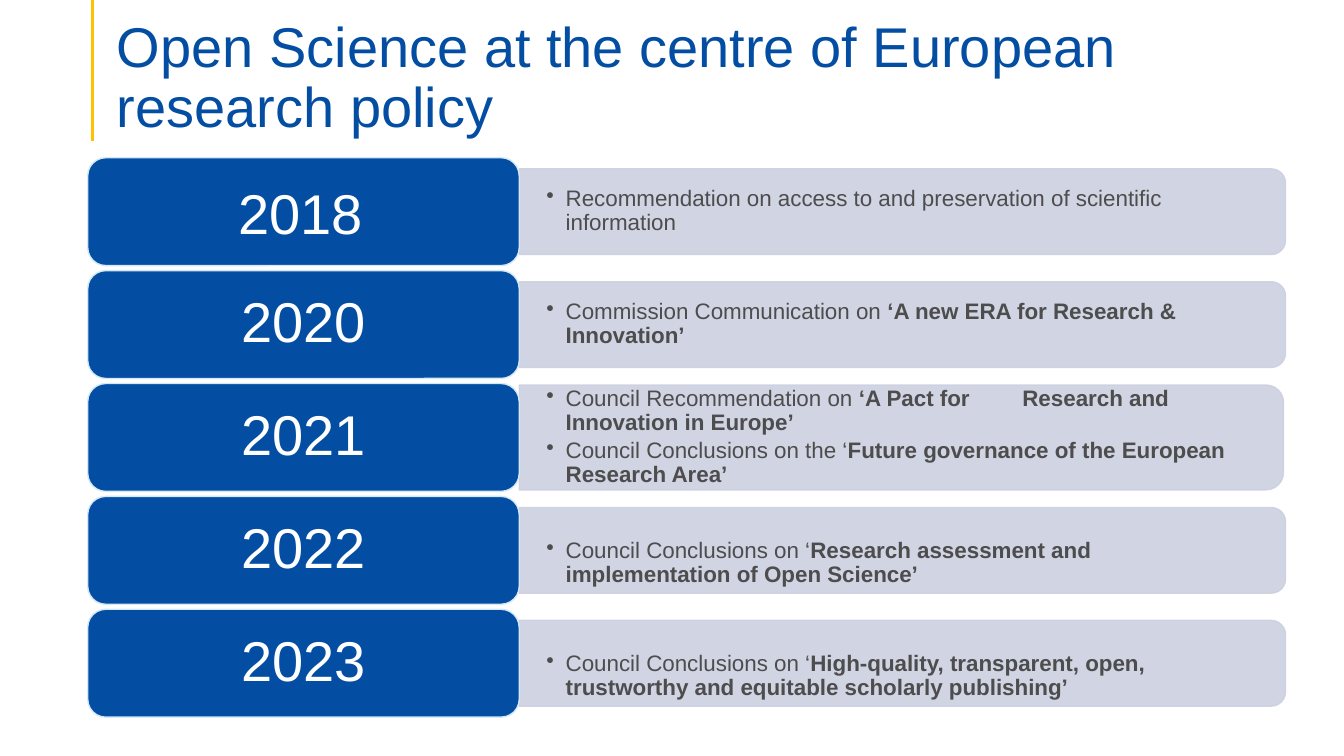
"""Build a slide that lists European open science policy milestones by year."""
from lxml.etree import SubElement
from pptx import Presentation
from pptx.dml.color import RGBColor
from pptx.enum.shapes import MSO_CONNECTOR, MSO_SHAPE
from pptx.enum.text import MSO_ANCHOR, MSO_AUTO_SIZE, PP_ALIGN
from pptx.oxml.ns import qn
from pptx.util import Inches, Pt

BLUE = RGBColor(0x03, 0x4E, 0xA2)
PALE_BLUE = RGBColor(0xD3, 0xE8, 0xF9)
LAVENDER = RGBColor(0xCC, 0xD0, 0xE0)
GOLD = RGBColor(0xFF, 0xC0, 0x00)
GREY = RGBColor(0x4D, 0x4D, 0x4D)
WHITE = RGBColor(0xFF, 0xFF, 0xFF)

FIRST_CENTRE, ROW_PITCH = 2.1, 1.12
YEAR_LEFT, YEAR_WIDTH, YEAR_HEIGHT = 0.87, 4.28, 1.07
PANEL_LEFT = YEAR_LEFT + YEAR_WIDTH

MILESTONES = [
    {"year": "2018", "year_drop": 0.1, "year_shift": 0.06, "entries": [
        ("Recommendation on access to and preservation of scientific information", "")]},
    {"year": "2020", "entries": [
        ("Commission Communication on ", "‘A new ERA for Research & Innovation’")]},
    {"year": "2021", "panel": (7.58, 1.04), "entries": [
        ("Council Recommendation on ", "‘A Pact for\tResearch and Innovation in Europe’"),
        ("Council Conclusions on the ‘", "Future governance of the European Research Area’")]},
    {"year": "2022", "drop": 0.26, "entries": [
        ("Council Conclusions on ‘", "Research assessment and implementation of Open Science’")]},
    {"year": "2023", "drop": 0.26, "entries": [
        ("Council Conclusions on ‘",
         "High-quality, transparent, open, trustworthy and equitable scholarly publishing’")]},
]


def apply(target, values):
    """Set each named attribute on the target."""
    for name, value in values.items():
        setattr(target, name, value)


class PolicySlide:
    """Hold the style and the current slide."""

    font_name = "Arial"
    line_spacing = 0.9

    def __init__(self, presentation):
        """Add a title-only slide."""
        self.slide = presentation.slides.add_slide(presentation.slide_layouts[5])

    def frame(self, shape, anchor, insets):
        """Format the text frame and return it."""
        left, top, right, bottom = map(Inches, insets)
        apply(shape.text_frame, {
            "word_wrap": True, "auto_size": MSO_AUTO_SIZE.NONE, "vertical_anchor": anchor,
            "margin_left": left, "margin_top": top,
            "margin_right": right, "margin_bottom": bottom})
        return shape.text_frame

    def add_words(self, paragraph, wording, size, color, align, bold=False):
        """Add one run to a paragraph."""
        apply(paragraph, {"alignment": align, "line_spacing": self.line_spacing})
        run = paragraph.add_run()
        run.text = wording
        apply(run.font, {"name": self.font_name, "size": Pt(size), "bold": bold})
        run.font.color.rgb = color

    def title(self, wording):
        """Place and format the title."""
        heading = self.slide.shapes.title
        apply(heading, {"left": Inches(1.06), "top": Inches(0.53),
                        "width": Inches(11.5), "height": Inches(0.86)})
        frame = self.frame(heading, MSO_ANCHOR.BOTTOM, (0.1, 0.05, 0.1, 0))
        self.add_words(frame.paragraphs[0], wording, 40, BLUE, PP_ALIGN.LEFT)

    def accent(self):
        """Draw the vertical rule beside the title."""
        rule = self.slide.shapes.add_connector(
            MSO_CONNECTOR.STRAIGHT, Inches(0.92), 0, Inches(0.92), Inches(1.4))
        apply(rule.line, {"width": Pt(2.25)})
        rule.line.color.rgb = GOLD
        SubElement(rule._element.spPr, qn("a:effectLst"))

    def block(self, preset, box, fill, outline):
        """Add a filled preset shape."""
        shape = self.slide.shapes.add_shape(preset, *map(Inches, box))
        shape.shadow.inherit = False
        shape.fill.solid()
        shape.fill.fore_color.rgb = fill
        shape.line.color.rgb = outline
        shape.line.width = Pt(1)
        return shape

    def panel(self, centre, width, height):
        """Add a panel with rounded corners on its right side."""
        middle = PANEL_LEFT + width / 2
        box = (middle - height / 2, centre - width / 2, height, width)
        shape = self.block(MSO_SHAPE.ROUND_2_SAME_RECTANGLE, box, LAVENDER, LAVENDER)
        shape.rotation = 90
        for color in shape._element.spPr.iter(qn("a:srgbClr")):
            SubElement(color, qn("a:alpha"), val="90000")

    def entries(self, centre, entries, drop):
        """List the bulleted policy documents of one year."""
        box = self.slide.shapes.add_textbox(
            Inches(PANEL_LEFT), Inches(centre - 0.52), Inches(7.55), Inches(1.04))
        frame = self.frame(box, MSO_ANCHOR.MIDDLE, (0.27, drop, 0.27, 0))
        for index, (lead, document) in enumerate(entries):
            paragraph = frame.add_paragraph() if index else frame.paragraphs[0]
            properties = paragraph._p.get_or_add_pPr()
            properties.set("marL", str(Inches(0.19)))
            properties.set("indent", str(-Inches(0.19)))
            SubElement(properties, qn("a:buChar"), char="•")
            if "\t" in document:
                stops = SubElement(properties, qn("a:tabLst"))
                SubElement(stops, qn("a:tab"), pos=str(Inches(4.72)), algn="l")
            paragraph.space_after = Pt(2.4)
            self.add_words(paragraph, lead, 16, GREY, PP_ALIGN.LEFT)
            if document:
                self.add_words(paragraph, document, 16, GREY, PP_ALIGN.LEFT, bold=True)

    def year(self, centre, wording, drop, shift):
        """Add the rounded label of one year."""
        box = (YEAR_LEFT, centre - YEAR_HEIGHT / 2, YEAR_WIDTH, YEAR_HEIGHT)
        label = self.block(MSO_SHAPE.ROUNDED_RECTANGLE, box, BLUE, PALE_BLUE)
        frame = self.frame(label, MSO_ANCHOR.MIDDLE, (0.17, drop, 0.17 + shift, 0))
        self.add_words(frame.paragraphs[0], wording, 40, WHITE, PP_ALIGN.CENTER)


def main():
    """Build and save the presentation."""
    presentation = Presentation()
    apply(presentation, {"slide_width": Inches(13.33), "slide_height": Inches(7.5)})
    policy = PolicySlide(presentation)
    policy.accent()
    policy.title("Open Science at the centre of European research policy")
    for row, milestone in enumerate(MILESTONES):
        centre = FIRST_CENTRE + row * ROW_PITCH
        policy.panel(centre, *milestone.get("panel", (7.6, 0.85)))
        policy.entries(centre, milestone["entries"], milestone.get("drop", 0))
        policy.year(centre, milestone["year"], milestone.get("year_drop", 0),
                    milestone.get("year_shift", 0))
    presentation.save("out.pptx")


if __name__ == "__main__":
    main()
